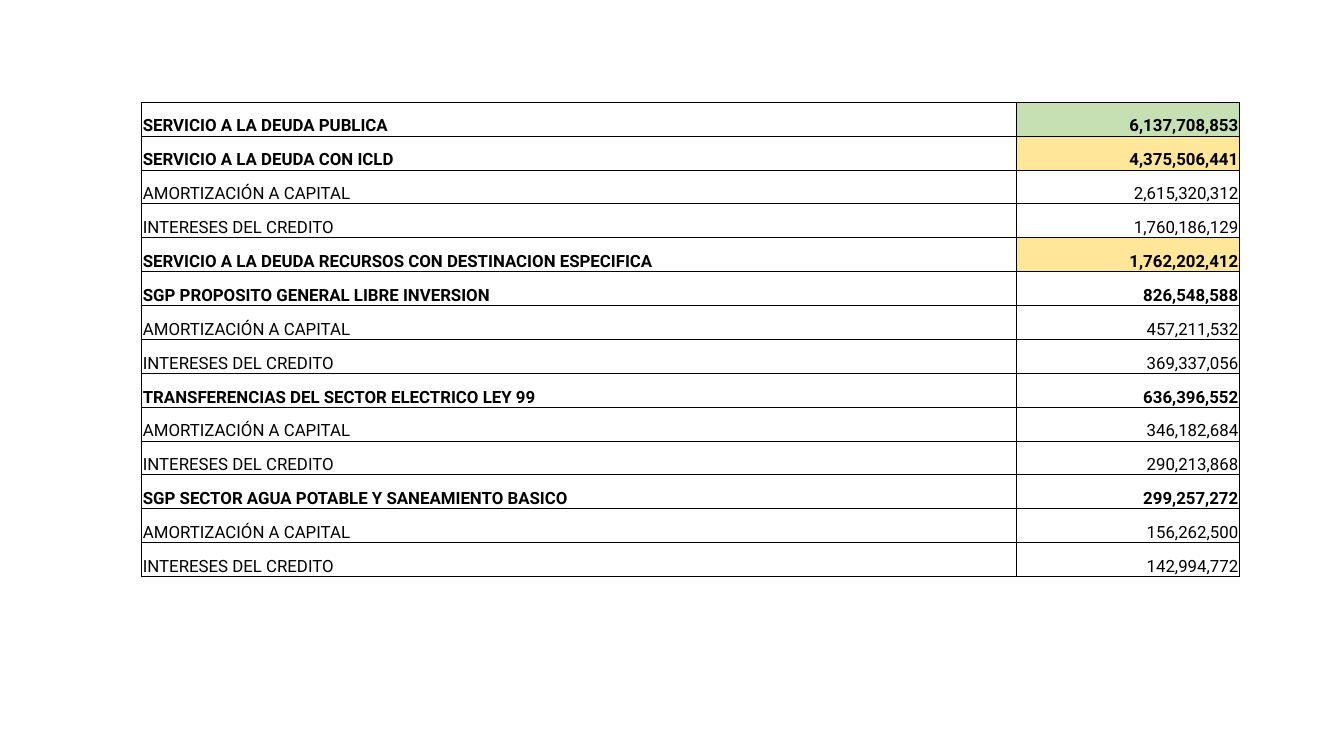
from lxml import etree
from pptx import Presentation
from pptx import util as u
from pptx.dml.color import RGBColor
from pptx.enum import text
from pptx.oxml import ns

BLACK = RGBColor(0x00, 0x00, 0x00)
GREEN = RGBColor(0xC6, 0xE0, 0xB4)
GOLD = RGBColor(0xFF, 0xE6, 0x99)

CAPITAL = "AMORTIZACIÓN A CAPITAL"
INTEREST = "INTERESES DEL CREDITO"

# Label, amount and fill of the amount
rows = [
    ("SERVICIO A LA DEUDA PUBLICA", 6137708853, GREEN),
    ("SERVICIO A LA DEUDA CON ICLD", 4375506441, GOLD),
    (CAPITAL, 2615320312, None),
    (INTEREST, 1760186129, None),
    ("SERVICIO A LA DEUDA RECURSOS CON DESTINACION ESPECIFICA", 1762202412, GOLD),
    ("SGP PROPOSITO GENERAL LIBRE INVERSION", 826548588, None),
    (CAPITAL, 457211532, None),
    (INTEREST, 369337056, None),
    ("TRANSFERENCIAS DEL SECTOR ELECTRICO LEY 99", 636396552, None),
    (CAPITAL, 346182684, None),
    (INTEREST, 290213868, None),
    ("SGP SECTOR AGUA POTABLE Y SANEAMIENTO BASICO", 299257272, None),
    (CAPITAL, 156262500, None),
    (INTEREST, 142994772, None),
]


def add_borders(cell):
    props = cell._tc.get_or_add_tcPr()
    for side in ("a:lnL", "a:lnR", "a:lnT", "a:lnB"):
        line = etree.SubElement(props, ns.qn(side), w=str(u.Pt(0.5)))
        fill = etree.SubElement(line, ns.qn("a:solidFill"))
        etree.SubElement(fill, ns.qn("a:srgbClr"), val=str(BLACK))


# Slide
prs = Presentation()
prs.slide_width, prs.slide_height = u.Cm(25.4), u.Cm(14.28)
slide = prs.slides.add_slide(prs.slide_layouts[6])

# Table grid
widths = u.Cm(16.54), u.Cm(4.22)
height = u.Cm(0.64)
table = slide.shapes.add_table(
    len(rows), 2, u.Cm(2.67), u.Cm(1.93), sum(widths), height * len(rows)
).table
table.first_row = table.horz_banding = False
for col, width in zip(table.columns, widths):
    col.width = width

# Debt rows: headings in bold, details in regular
for i, (label, amount, color) in enumerate(rows):
    table.rows[i].height = height
    parts = (
        (label, text.PP_ALIGN.LEFT, None),
        (f"{amount:,}", text.PP_ALIGN.RIGHT, color),
    )
    for cell, (words, align, shade) in zip(table.rows[i].cells, parts):
        cell.margin_left = cell.margin_right = cell.margin_top = u.Cm(0.03)
        cell.margin_bottom = 0
        cell.vertical_anchor = text.MSO_ANCHOR.BOTTOM
        add_borders(cell)
        if shade:
            cell.fill.solid()
            cell.fill.fore_color.rgb = shade
        else:
            cell.fill.background()
        cell.text = words
        para = cell.text_frame.paragraphs[0]
        para.alignment = align
        para.font.name = "Roboto"
        para.font.size = u.Pt(9)
        para.font.bold = label not in (CAPITAL, INTEREST)
        para.font.color.rgb = BLACK

prs.save("out.pptx")
